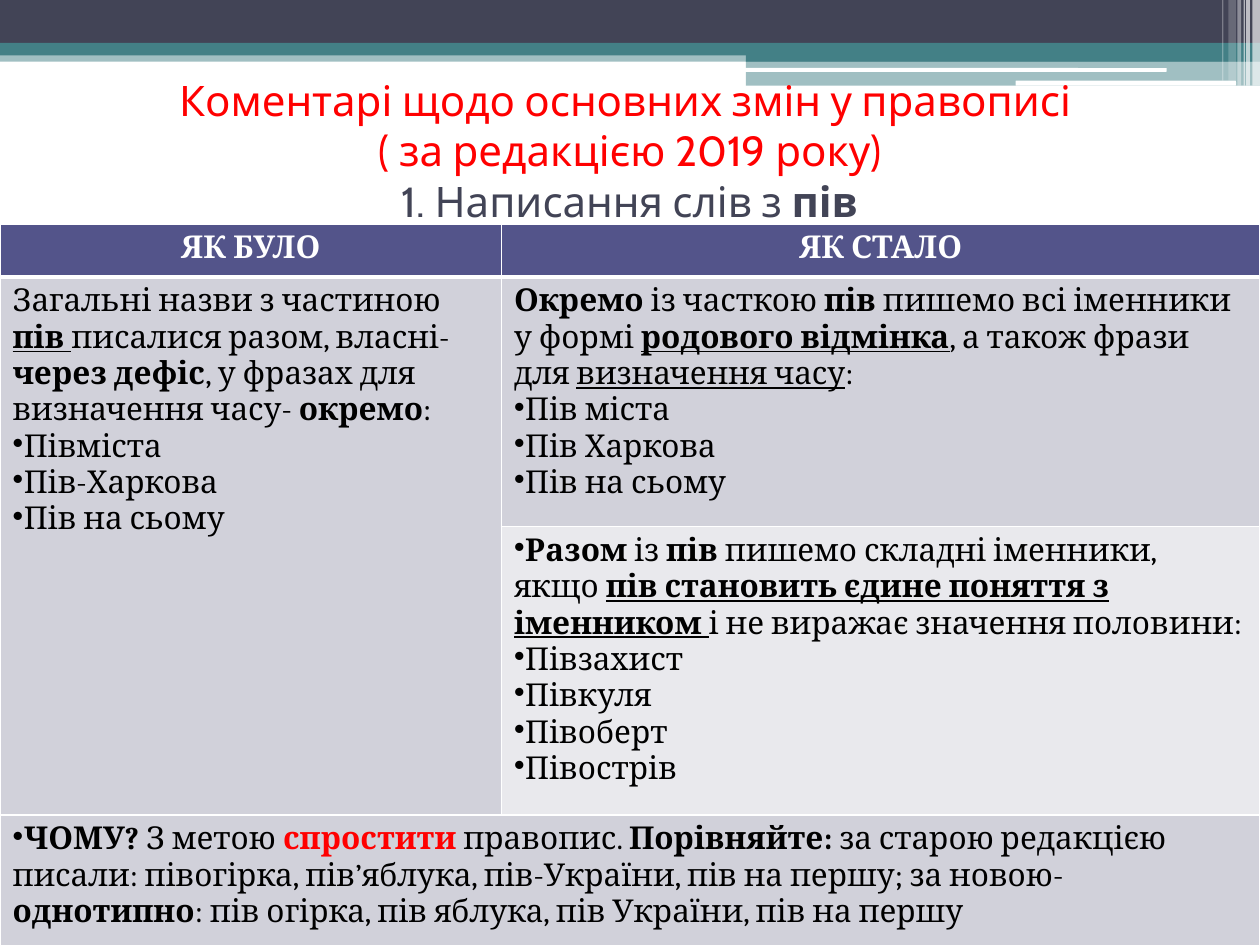
import lxml.etree
import pptx
import pptx.dml.color
import pptx.enum.shapes
import pptx.enum.text
import pptx.oxml.ns
import pptx.util

Inches = pptx.util.Inches
Pt = pptx.util.Pt
RGBColor = pptx.dml.color.RGBColor
MSO_SHAPE = pptx.enum.shapes.MSO_SHAPE
ANCHOR = pptx.enum.text.MSO_ANCHOR
CENTER = pptx.enum.text.PP_ALIGN.CENTER
qn = pptx.oxml.ns.qn

WHITE = RGBColor(0xFF, 0xFF, 0xFF)
BLACK = RGBColor(0, 0, 0)
RED = RGBColor(0xFF, 0, 0)
SLATE = RGBColor(0x42, 0x44, 0x56)
TEAL = RGBColor(0x43, 0x80, 0x86)
VIOLET = RGBColor(0x53, 0x54, 0x8A)
GREY = RGBColor(0xD1, 0xD1, 0xDA)
PALE = RGBColor(0xE9, 0xE9, 0xED)

# left, top, width, height, colour, opacity in percent
BARS = [
    (0, 0.4, 10, 0.09, TEAL, 50),
    (0, 0, 10, 0.34, SLATE, 100),
    (0, 0.34, 10, 0.1, TEAL, 100),
    (5.92, 0.39, 4.08, 0.1, TEAL, 100),
    (5.92, 0.48, 4.08, 0.2, TEAL, 50),
]
PILLS = [(5.91, 0.54, 3.35, 0.03), (8.06, 0.64, 1.75, 0.04)]
# left, width, height, opacity of the upright stripes
STRIPES = [
    (9.94, 0.06, 0.68, 65),
    (9.89, 0.03, 0.68, 65),
    (9.87, 0.01, 0.68, 60),
    (9.82, 0.03, 0.68, 40),
    (9.75, 0.06, 0.64, 20),
    (9.7, 0.01, 0.64, 30),
]

# Marks before a run: * bold, _ underlined, ! red
BEFORE = [
    ("", "Загальні назви з частиною "), ("*_", "пів "),
    ("", "писалися разом, власні- "), ("*", "через дефіс"),
    ("", ", у фразах для визначення часу- "), ("*", "окремо"), ("", ":"),
]
APART = [
    ("*", "Окремо"), ("", " із часткою "), ("*", "пів"),
    ("", " пишемо всі іменники у формі "), ("*_", "родового відмінка"),
    ("", ", а також фрази для "), ("_", "визначення часу"), ("", ":"),
]
JOINED = [
    ("*", "Разом"), ("", " із "), ("*", "пів"),
    ("", " пишемо складні іменники, якщо "),
    ("*_", "пів становить єдине поняття з іменником "),
    ("", "і не виражає значення половини:"),
]
REASON = [
    ("*", "ЧОМУ? "), ("", "З метою "), ("*!", "спростити "),
    ("", "правопис. "), ("*", "Порівняйте: "),
    ("", "за старою редакцією писали: півогірка, пів’яблука, пів-України, "
         "пів на першу; за новою- "),
    ("*", "однотипно"),
    ("", ": пів огірка, пів яблука, пів України, пів на першу"),
]


def write(para, text, size=18, font="Cambria", color=BLACK, bold=False, line=False):
    run = para.add_run()
    run.text = text
    run.font.size = Pt(size)
    run.font.name = font
    run.font.color.rgb = color
    run.font.bold = bold
    run.font.underline = line


def bar(slide, left, top, width, height, color, alpha=100, kind=MSO_SHAPE.RECTANGLE):
    shape = slide.shapes.add_shape(
        kind, Inches(left), Inches(top), Inches(width), Inches(height))
    shape.shadow.inherit = False
    shape.line.fill.background()
    shape.fill.solid()
    shape.fill.fore_color.rgb = color
    if alpha < 100:
        tint = shape._element.spPr.find(qn("a:solidFill"))[0]
        lxml.etree.SubElement(tint, qn("a:alpha"), val=str(alpha * 1000))


def title(slide):
    box = slide.shapes.add_textbox(Inches(0), Inches(0.68), Inches(10), Inches(1.02))
    frame = box.text_frame
    frame.word_wrap = True
    frame.vertical_anchor = ANCHOR.MIDDLE
    para = frame.paragraphs[0]
    para.alignment = CENTER
    style = {"size": 24, "font": "Cabin"}
    for text in ("Коментарі щодо основних змін у правописі ",
                 "( за редакцією 2019 року)"):
        write(para, text, color=RED, **style)
        para.add_line_break()
    write(para, "1. Написання слів з ", color=SLATE, **style)
    write(para, "пів", color=SLATE, bold=True, **style)


def border(cell, side, width):
    edge = lxml.etree.SubElement(
        cell._tc.get_or_add_tcPr(), qn("a:ln" + side), w=str(Pt(width)))
    fill = lxml.etree.SubElement(edge, qn("a:solidFill"))
    lxml.etree.SubElement(fill, qn("a:srgbClr"), val=str(WHITE))


def bullet(para):
    props = para._p.get_or_add_pPr()
    props.set("marL", "0")
    props.set("indent", "0")
    lxml.etree.SubElement(props, qn("a:buChar"), char="•")


def fill_in(cell, runs, items=(), dot=False):
    frame = cell.text_frame
    para = frame.paragraphs[0]
    if dot:
        bullet(para)
    for marks, text in runs:
        write(para, text, bold="*" in marks, line="_" in marks,
              color=RED if "!" in marks else BLACK)
    for item in items:
        para = frame.add_paragraph()
        bullet(para)
        write(para, item)


def rules(slide):
    table = slide.shapes.add_table(
        4, 2, Inches(0), Inches(1.78), Inches(10), Inches(5.73)).table
    for col, width in zip(table.columns, (3.98, 6.02)):
        col.width = Inches(width)
    for row, height in zip(table.rows, (0.42, 1.98, 2.29, 1.04)):
        row.height = Inches(height)

    # Borders and fills, with a thick line under the header
    for r, color in enumerate((VIOLET, GREY, PALE, GREY)):
        for c in range(2):
            cell = table.cell(r, c)
            for side in "LRTB":
                thick = (r, side) in ((0, "B"), (1, "T"))
                border(cell, side, 3 if thick else 1)
            cell.fill.solid()
            cell.fill.fore_color.rgb = GREY if (r, c) == (2, 0) else color
    table.cell(1, 0).merge(table.cell(2, 0))
    table.cell(3, 0).merge(table.cell(3, 1))

    # Wording
    for c, text in enumerate(("ЯК БУЛО", "ЯК СТАЛО")):
        para = table.cell(0, c).text_frame.paragraphs[0]
        para.alignment = CENTER
        write(para, text, color=WHITE, bold=True)
    fill_in(table.cell(1, 0), BEFORE, ("Півміста", "Пів-Харкова", "Пів на сьому"))
    fill_in(table.cell(1, 1), APART, ("Пів міста", "Пів Харкова", "Пів на сьому"))
    fill_in(table.cell(2, 1), JOINED,
            ("Півзахист", "Півкуля", "Півоберт", "Півострів"), dot=True)
    fill_in(table.cell(3, 0), REASON, dot=True)


def main():
    deck = pptx.Presentation()
    deck.slide_width = Inches(10)
    deck.slide_height = Inches(7.5)
    slide = deck.slides.add_slide(deck.slide_layouts[6])

    # Top band
    for spec_row in BARS:
        bar(slide, *spec_row)
    for place in PILLS:
        bar(slide, *place, WHITE, kind=MSO_SHAPE.ROUNDED_RECTANGLE)
    for left, width, height, alpha in STRIPES:
        bar(slide, left, 0, width, height, WHITE, alpha)

    title(slide)
    rules(slide)
    deck.save("out.pptx")


if __name__ == "__main__":
    main()
